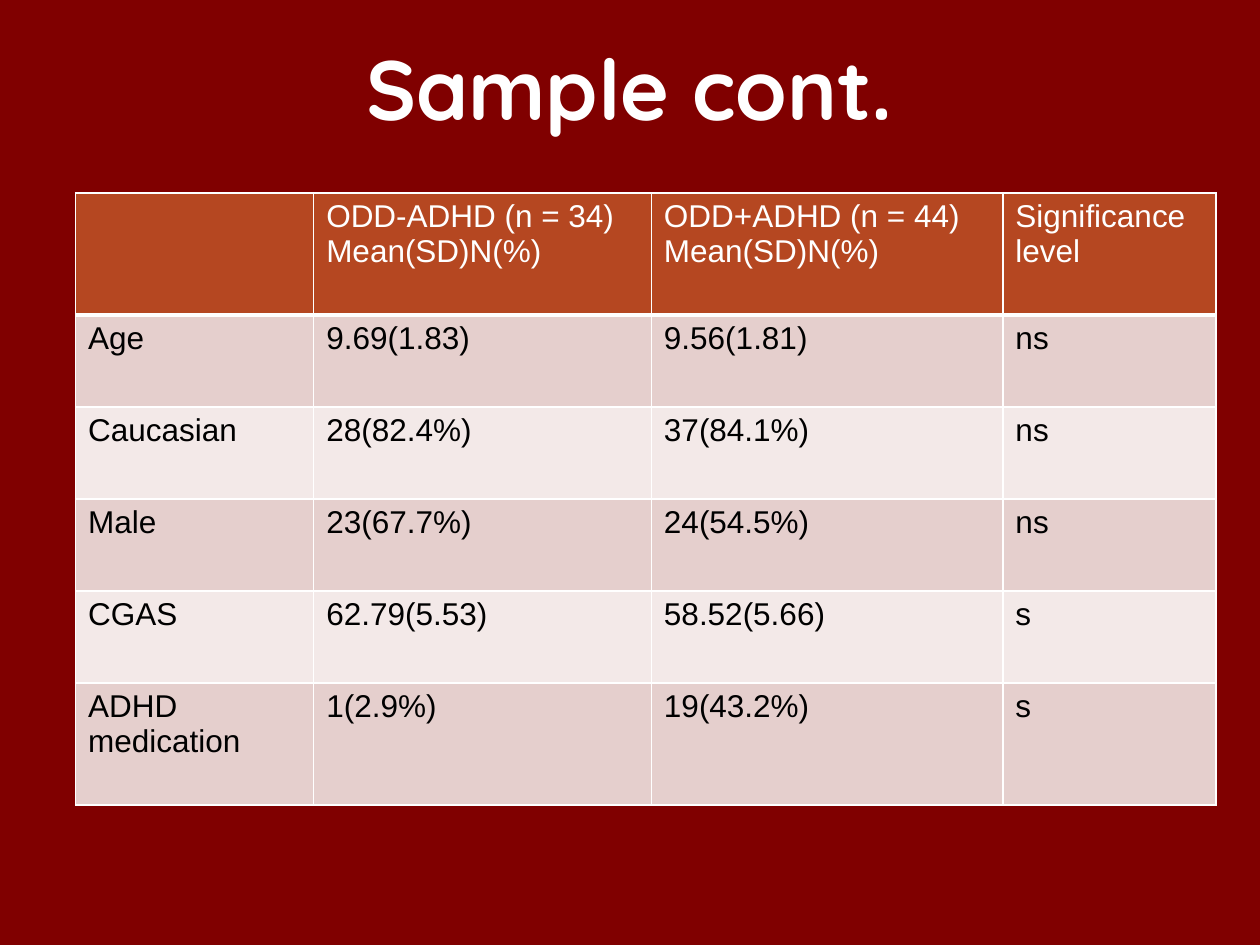
from lxml.etree import SubElement
from pptx import Presentation
from pptx.dml.color import RGBColor
from pptx.enum.text import MSO_ANCHOR, PP_ALIGN
from pptx.oxml.ns import qn
from pptx.util import Inches, Pt

COLORS = {
    "background": "800000",
    "header": "B54721",
    "band_dark": "E5CFCD",
    "band_light": "F3E9E8",
    "white": "FFFFFF",
    "black": "000000",
}


def rgb(name):
    return RGBColor.from_string(COLORS[name])


def add_borders(cell, bottom_width):
    """Draw white borders around a cell; call before setting its fill."""
    properties = cell._tc.get_or_add_tcPr()
    for side, width in (("L", 1), ("R", 1), ("T", 1), ("B", bottom_width)):
        line = SubElement(properties, qn(f"a:ln{side}"), w=str(Pt(width)))
        fill = SubElement(line, qn("a:solidFill"))
        SubElement(fill, qn("a:srgbClr"), val=COLORS["white"])


prs = Presentation()
prs.slide_width, prs.slide_height = Inches(10), Inches(7.5)
slide = prs.slides.add_slide(prs.slide_layouts[6])
slide.background.fill.solid()
slide.background.fill.fore_color.rgb = rgb("background")

# Title
title = slide.shapes.add_textbox(Inches(0.85), Inches(0.1), Inches(8.29), Inches(1.25))
title.text_frame.word_wrap = True
title.text_frame.vertical_anchor = MSO_ANCHOR.MIDDLE
title.text_frame.text = "Sample cont."
heading = title.text_frame.paragraphs[0]
heading.alignment = PP_ALIGN.CENTER
heading.line_spacing = 0.95
heading_font = heading.runs[0].font
heading_font.name, heading_font.size, heading_font.bold = "Quicksand", Pt(48), True
heading_font.color.rgb = rgb("white")

# Sample characteristics
sample_rows = [
    ("", "ODD-ADHD (n = 34)\nMean(SD)N(%)", "ODD+ADHD (n = 44)\nMean(SD)N(%)", "Significance level"),
    ("Age", "9.69(1.83)", "9.56(1.81)", "ns"),
    ("Caucasian", "28(82.4%)", "37(84.1%)", "ns"),
    ("Male", "23(67.7%)", "24(54.5%)", "ns"),
    ("CGAS", "62.79(5.53)", "58.52(5.66)", "s"),
    ("ADHD medication", "1(2.9%)", "19(43.2%)", "s"),
]
column_widths = [1.89, 2.68, 2.79, 1.69]
row_heights = [0.97, 0.73, 0.73, 0.73, 0.73, 0.97]

sample = slide.shapes.add_table(
    len(sample_rows), len(column_widths), Inches(0.6), Inches(1.53),
    Inches(sum(column_widths)), Inches(sum(row_heights)),
).table
for column, width in zip(sample.columns, column_widths):
    column.width = Inches(width)

for r, (values, height) in enumerate(zip(sample_rows, row_heights)):
    sample.rows[r].height = Inches(height)
    is_header = r == 0
    band = "header" if is_header else "band_dark" if r % 2 else "band_light"
    for c, value in enumerate(values):
        cell = sample.cell(r, c)
        add_borders(cell, 3 if is_header else 1)
        cell.fill.solid()
        cell.fill.fore_color.rgb = rgb(band)
        cell.text_frame.text = value
        for paragraph in cell.text_frame.paragraphs:
            font = paragraph.font
            for run in paragraph.runs:
                font = run.font
            font.name, font.size, font.bold = "Arial", Pt(18), False
            font.color.rgb = rgb("white" if is_header else "black")

# The header's thick rule is shared with the top of the first data row
for cell in sample.rows[1].cells:
    cell._tc.tcPr.find(qn("a:lnT")).set("w", str(Pt(3)))

prs.save("out.pptx")
